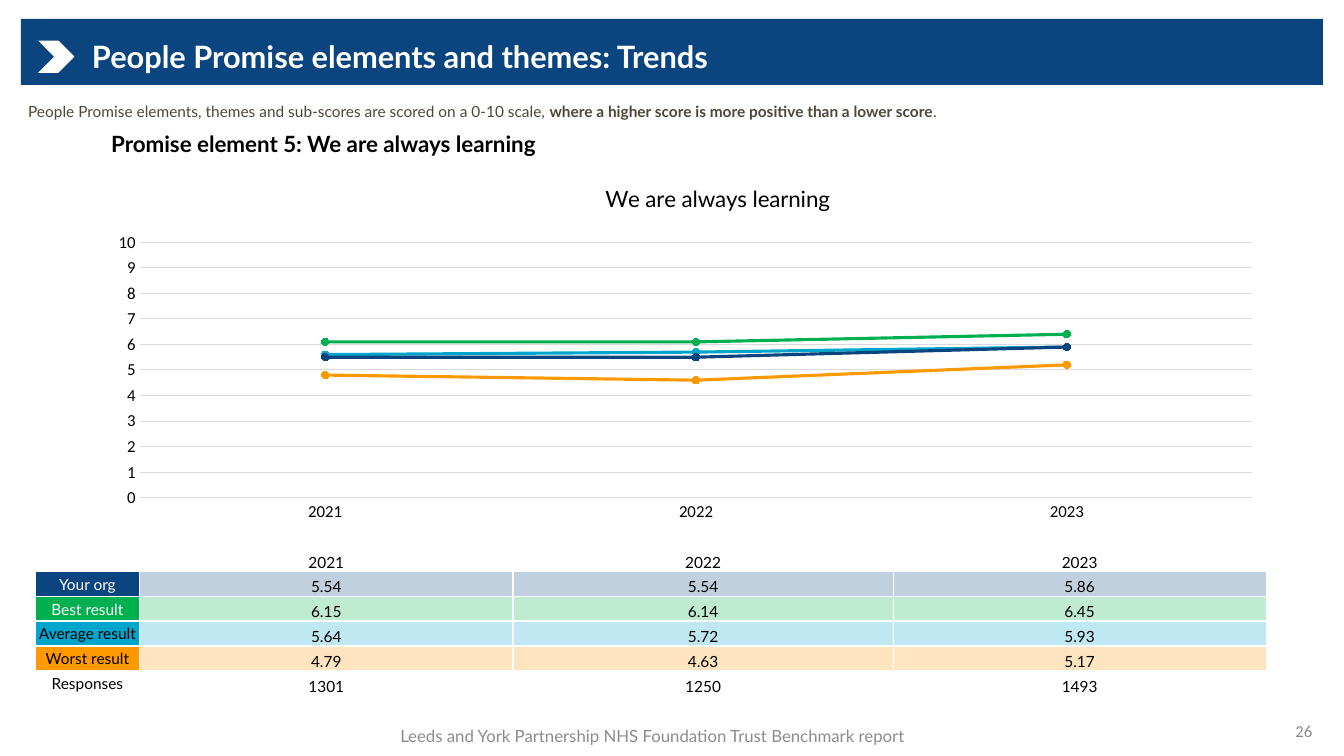
from dataclasses import dataclass

from lxml.etree import SubElement
from pptx import Presentation
from pptx.chart.data import CategoryChartData
from pptx.dml.color import RGBColor
from pptx.enum.chart import XL_CHART_TYPE as Kind, XL_MARKER_STYLE as Mark, XL_TICK_MARK as Tick
from pptx.enum.shapes import MSO_SHAPE as Geo
from pptx.enum.text import MSO_ANCHOR as Anchor, MSO_AUTO_SIZE as Fit, PP_ALIGN as Align
from pptx.oxml import parse_xml
from pptx.oxml.ns import nsdecls, qn
from pptx.util import Pt


@dataclass(frozen=True)
class Theme:
    navy: str = "0B457F"
    green: str = "00B050"
    cyan: str = "00A5CC"
    amber: str = "FF9900"
    white: str = "FFFFFF"
    black: str = "000000"
    brown: str = "4D4639"
    gray: str = "8C8C8C"
    rule: str = "D9D9D9"
    font: str = "Lato"
    plain: str = "Calibri"
    title: float = 22
    head: float = 16
    foot: float = 12
    axis: float = 12
    small: float = 11


T = Theme()


@dataclass(frozen=True)
class Box:
    left: float
    top: float
    width: float
    height: float

    def lengths(self) -> tuple:
        return Pt(self.left), Pt(self.top), Pt(self.width), Pt(self.height)


@dataclass(frozen=True)
class Note:
    box: Box
    runs: tuple  # (text, bold) pairs
    size: float
    color: str
    font: str = T.font
    align: Align = Align.LEFT
    anchor: Anchor = Anchor.TOP


@dataclass(frozen=True)
class Row:
    label: str
    cells: tuple
    fill: str
    ink: str = T.black
    points: tuple = ()  # chart values


YEARS = ("2021", "2022", "2023")
ORG = Row("Your org", (5.54, 5.54, 5.86), T.navy, T.white, (5.5, 5.5, 5.9))
BEST = Row("Best result", (6.15, 6.14, 6.45), T.green, T.white, (6.1, 6.1, 6.4))
MEAN = Row("Average result", (5.64, 5.72, 5.93), T.cyan, points=(5.6, 5.7, 5.9))
WORST = Row("Worst result", (4.79, 4.63, 5.17), T.amber, points=(4.8, 4.6, 5.2))
ROWS = (Row("", YEARS, T.white), ORG, BEST, MEAN, WORST,
        Row("Responses", (1301, 1250, 1493), T.white))
LINES = (MEAN, BEST, WORST, ORG)
COLS = (74.5, 266.8, 271.5, 266.5)
ROW_H = 17.75

NOTES = (
    Note(Box(13, 69.5, 937, 21),
         (("People Promise elements, themes and sub-scores are scored on a 0-10 scale, ", False),
          ("where a higher score is more positive than a lower score", True), (".", False)),
         T.small, T.brown),
    Note(Box(72.3, 89.3, 480, 26.6), (("Promise element 5: We are always learning", True),),
         T.head, T.black),
    Note(Box(728.6, 507.6, 216, 28.8), (("26", False),), T.foot, T.gray, T.plain,
         Align.RIGHT, Anchor.MIDDLE),
    Note(Box(212.4, 511.8, 507.6, 28),
         (("Leeds and York Partnership NHS Foundation Trust Benchmark report", False),),
         T.foot, T.gray, T.font, Align.CENTER, Anchor.MIDDLE),
)


def style(font, size: float, color: str, name: str = T.font, bold: bool = False) -> None:
    font.size, font.name, font.bold = Pt(size), name, bold
    font.color.rgb = RGBColor.from_string(color)


def paint(fill, color: str) -> None:
    fill.solid()
    fill.fore_color.rgb = RGBColor.from_string(color)


def stroke(line, color: str, width: float) -> None:
    line.color.rgb = RGBColor.from_string(color)
    line.width = Pt(width)


def add_shape(slide, geo: Geo, box: Box, color: str) -> None:
    shape = slide.shapes.add_shape(geo, *box.lengths())
    shape.shadow.inherit = False
    paint(shape.fill, color)
    shape.line.fill.background()


def add_title(slide, text: str, box: Box) -> None:
    title = slide.shapes.title
    title.element.getparent().append(title.element)  # in front of the bar
    title.left, title.top, title.width, title.height = box.lengths()
    frame = title.text_frame
    frame.text, frame.auto_size = text, Fit.NONE
    frame.vertical_anchor = Anchor.MIDDLE
    para = frame.paragraphs[0]
    para.alignment, para.line_spacing = Align.LEFT, 0.9
    style(para.font, T.title, T.white, bold=True)


def add_note(slide, note: Note) -> None:
    frame = slide.shapes.add_textbox(*note.box.lengths()).text_frame
    frame.word_wrap, frame.vertical_anchor = True, note.anchor
    para = frame.paragraphs[0]
    para.alignment = note.align
    style(para.font, note.size, note.color, note.font)
    for text, bold in note.runs:
        run = para.add_run()
        run.text, run.font.bold = text, bold


def add_cell(cell, text: str, fill: str, ink: str, anchor: Anchor, tint: bool) -> None:
    cell.margin_left = cell.margin_right = cell.margin_top = Pt(0.7)
    cell.margin_bottom = Pt(0)
    cell.vertical_anchor = anchor
    cell.text = text
    para = cell.text_frame.paragraphs[0]
    para.alignment = Align.CENTER
    style(para.font, T.small, ink)
    paint(cell.fill, fill)
    props = cell._tc.get_or_add_tcPr()
    if tint:
        SubElement(props.find(".//" + qn("a:srgbClr")), qn("a:alpha"), val="25000")
    for spot, side in enumerate("LRTB"):
        props.insert(spot, parse_xml(
            f'<a:ln{side} {nsdecls("a")} w="{Pt(1)}"><a:solidFill>'
            f'<a:srgbClr val="{T.white}"/></a:solidFill></a:ln{side}>'))


def add_table(slide) -> None:
    box = Box(25.2, 390.4, sum(COLS), ROW_H * len(ROWS))
    table = slide.shapes.add_table(len(ROWS), len(COLS), *box.lengths()).table
    table.first_row = table.horz_banding = False
    for col, width in zip(table.columns, COLS):
        col.width = Pt(width)
    for line, row in zip(table.rows, ROWS):
        line.height = Pt(ROW_H)
        label, *cells = line.cells
        add_cell(label, row.label, row.fill, row.ink, Anchor.MIDDLE, False)
        for cell, value in zip(cells, row.cells):
            add_cell(cell, str(value), row.fill, T.black, Anchor.BOTTOM, row.fill != T.white)


def place(part, spot: int, **sizes: float) -> None:
    """Fix a chart part at fractions of the chart's size."""
    for old in part.findall(qn("c:layout")):
        part.remove(old)
    layout = parse_xml(f'<c:layout {nsdecls("c")}><c:manualLayout/></c:layout>')
    if "w" in sizes:
        SubElement(layout[0], qn("c:layoutTarget"), val="inner")
    for axis in "xy":
        SubElement(layout[0], qn(f"c:{axis}Mode"), val="edge")
    for name, size in sizes.items():
        SubElement(layout[0], qn(f"c:{name}"), val=str(size))
    part.insert(spot, layout)


def add_chart(slide, box: Box) -> None:
    data = CategoryChartData(number_format="0.0")
    data.categories = YEARS
    for row in LINES:
        data.add_series(row.label, row.points)
    chart = slide.shapes.add_chart(Kind.LINE_MARKERS, *box.lengths(), data).chart
    chart.has_legend = False
    style(chart.font, T.axis, T.black, T.plain)
    chart.has_title = True
    frame = chart.chart_title.text_frame
    frame.text = "We are always learning"
    style(frame.paragraphs[0].font, T.head, T.black)
    place(chart.chart_title._element, 1, x=0.43, y=0.02)
    place(chart._chartSpace.chart.plotArea, 0, x=0.04, y=0.2, w=0.94, h=0.72)
    years, score = chart.category_axis, chart.value_axis
    for axis in (years, score):
        axis.major_tick_mark = axis.minor_tick_mark = Tick.NONE
        style(axis.tick_labels.font, T.axis, T.black, T.plain)
    stroke(years.format.line, T.rule, 0.75)
    score.format.line.fill.background()
    stroke(score.major_gridlines.format.line, T.rule, 0.75)
    score.minimum_scale, score.maximum_scale, score.major_unit = 0, 10, 1
    score.tick_labels.number_format = "0"
    score.tick_labels.number_format_is_linked = False
    chart.plots[0].vary_by_categories = False
    for line, row in zip(chart.plots[0].series, LINES):
        line.smooth = False
        stroke(line.format.line, row.fill, 2.25)
        line.marker.style, line.marker.size = Mark.CIRCLE, 5
        paint(line.marker.format.fill, row.fill)
        stroke(line.marker.format.line, row.fill, 0.75)


def main() -> None:
    deck = Presentation()
    deck.slide_width, deck.slide_height = Pt(960), Pt(540)
    slide = deck.slides.add_slide(deck.slide_layouts.get_by_name("Title Only"))
    add_shape(slide, Geo.RECTANGLE, Box(15, 13.4, 930, 47.3), T.navy)
    add_shape(slide, Geo.CHEVRON, Box(27.2, 29, 26, 23), T.white)
    add_title(slide, "People Promise elements and themes: Trends", Box(58.5, 25.5, 692, 32))
    add_table(slide)
    add_chart(slide, Box(66, 122.4, 845.5, 253.5))
    for note in NOTES:
        add_note(slide, note)
    deck.save("out.pptx")


if __name__ == "__main__":
    main()
